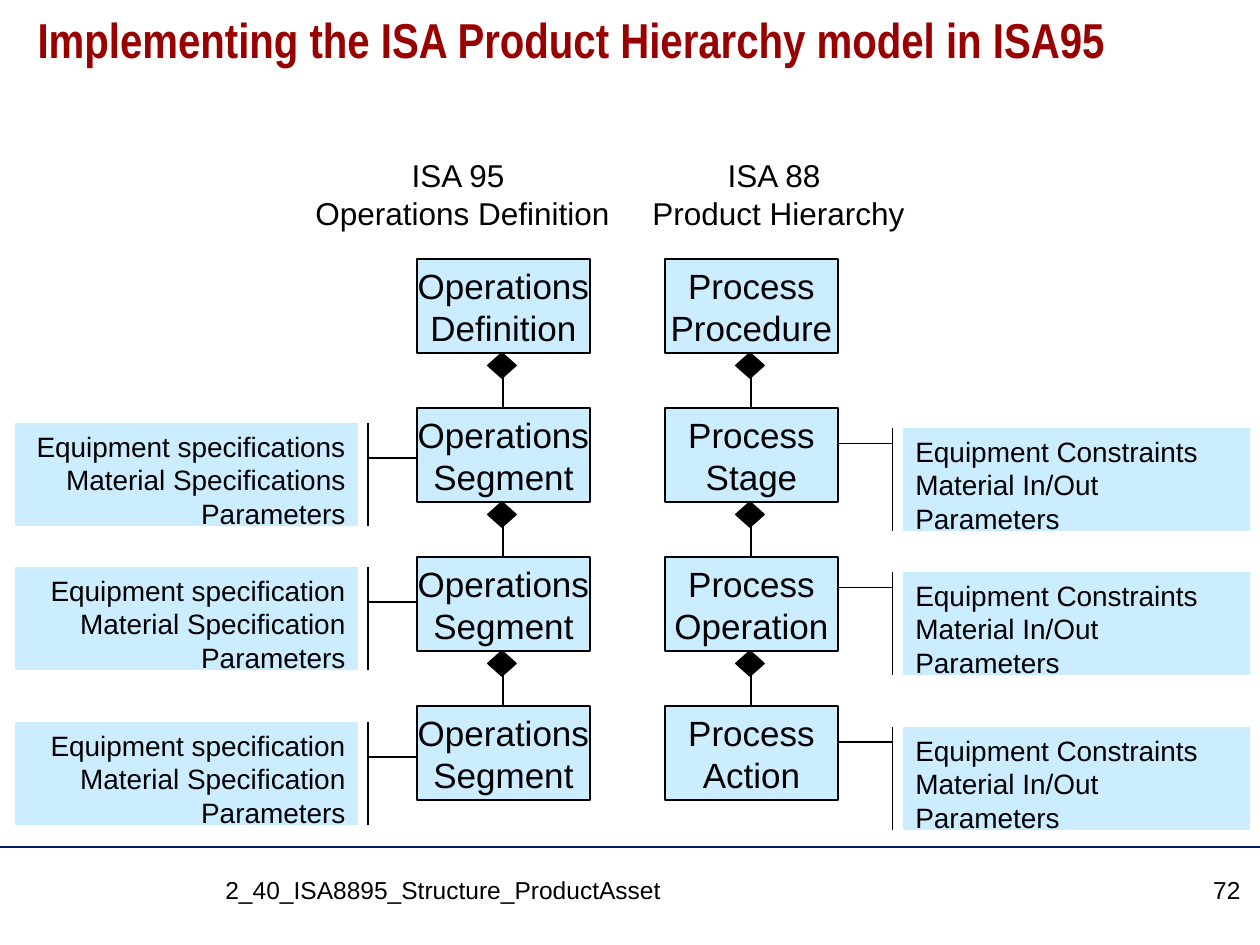
from pptx import Presentation
from pptx.dml.color import RGBColor
from pptx.enum.shapes import MSO_CONNECTOR, MSO_SHAPE
from pptx.enum.text import MSO_ANCHOR, MSO_AUTO_SIZE, PP_ALIGN
from pptx.oxml.ns import qn
from pptx.util import Pt
from lxml.etree import SubElement

EMU_PER_PX = 914400 / 126
COLORS = {"title": "990000", "box": "CCECFF", "ink": "000000", "rule": "002060"}
COLORS = {name: RGBColor.from_string(value) for name, value in COLORS.items()}


def px(*lengths):
    return [round(length * EMU_PER_PX) for length in lengths]


def write(shape, lines, size, align=PP_ALIGN.LEFT, anchor=MSO_ANCHOR.TOP,
          wrap=True, font="Arial", color="ink", bold=False):
    frame = shape.text_frame
    frame.word_wrap = wrap
    frame.vertical_anchor = anchor
    for index, line in enumerate(lines):
        paragraph = frame.add_paragraph() if index else frame.paragraphs[0]
        paragraph.alignment = align
        run = paragraph.add_run()
        run.text = line
        run.font.name = font
        run.font.size = Pt(size)
        run.font.bold = bold
        run.font.color.rgb = COLORS[color]


presentation = Presentation()
presentation.slide_width, presentation.slide_height = px(1260, 945)
slide = presentation.slides.add_slide(presentation.slide_layouts[5])
shapes = slide.shapes

# Title
title = shapes.title
title.left, title.top, title.width, title.height = px(25, 10, 1211, 105)
write(title, ["Implementing the ISA Product Hierarchy model in ISA95"], 28,
      font="Arial Narrow", color="title", bold=True)
title.text_frame.auto_size = MSO_AUTO_SIZE.NONE
title.text_frame.paragraphs[0].line_spacing = 0.9

# Footer
footer = shapes.add_textbox(*px(213, 869, 908, 57))
write(footer, ["2_40_ISA8895_Structure_ProductAsset"], 14)
page_number = shapes.add_textbox(*px(1137, 869, 116, 57))
write(page_number, ["72"], 14, PP_ALIGN.RIGHT)

# Two hierarchies of boxes, each level joined to the next
BOX_TOP, BOX_WIDTH, BOX_HEIGHT, ROW_PITCH = 259, 173, 94, 149
hierarchies = [
    (417, "Operations", ["Definition", "Segment", "Segment", "Segment"]),
    (665, "Process", ["Procedure", "Stage", "Operation", "Action"]),
]
links = [(0, 847, 1260, 847, "rule", 0.75)]
for left, kind, levels in hierarchies:
    for row, level in enumerate(levels):
        top = BOX_TOP + row * ROW_PITCH
        bottom = top + BOX_HEIGHT
        parts = [(MSO_SHAPE.RECTANGLE, (left, top, BOX_WIDTH, BOX_HEIGHT), "box")]
        if row < len(levels) - 1:
            parts.append((MSO_SHAPE.DIAMOND, (left + 71, bottom, 28, 25), "ink"))
            center = left + BOX_WIDTH // 2
            links.append((center, bottom, center, top + ROW_PITCH, "ink", 1))
        for preset, place, fill in parts:
            shape = shapes.add_shape(preset, *px(*place))
            shape.shadow.inherit = False
            shape.fill.solid()
            shape.fill.fore_color.rgb = COLORS[fill]
            shape.line.color.rgb = COLORS["ink"]
            shape.line.width = Pt(1)
            if preset == MSO_SHAPE.RECTANGLE:
                write(shape, [kind, level], 20, PP_ALIGN.CENTER, MSO_ANCHOR.MIDDLE, wrap=False)

for x1, y1, x2, y2, color, width in links:
    link = shapes.add_connector(MSO_CONNECTOR.STRAIGHT, *px(x1, y1, x2, y2))
    link.line.color.rgb = COLORS[color]
    link.line.width = Pt(width)
    SubElement(link._element.spPr, qn("a:effectLst"))

# Callouts beside the lower three levels
specifications = ["Equipment specification", "Material Specification", "Parameters"]
first_specifications = ["Equipment specifications", "Material Specifications", "Parameters"]
constraints = ["Equipment Constraints", "Material In/Out", "Parameters"]
callout_sides = [
    (15, 0, 343, PP_ALIGN.RIGHT, (0.34, 1.03, 0.34, 1.17),
     [first_specifications, specifications, specifications]),
    (903, 5, 347, PP_ALIGN.LEFT, (0.15, -0.03, 0.15, -0.19), [constraints] * 3),
]
for left, drop, width, align, adjustments, texts in callout_sides:
    for top, lines in zip((423, 567, 722), texts):
        callout = shapes.add_shape(MSO_SHAPE.LINE_CALLOUT_1_ACCENT_BAR,
                                   *px(left, top + drop, width, 103))
        for index, value in enumerate(adjustments):
            callout.adjustments[index] = value
        callout.shadow.inherit = False
        callout.fill.solid()
        callout.fill.fore_color.rgb = COLORS["box"]
        callout.line.color.rgb = COLORS["ink"]
        callout.line.width = Pt(1)
        write(callout, lines, 16, align)

# Column headings
headings = [
    ((302, 150, 321, 89), ["ISA 95 ", "Operations Definition"]),
    ((640, 150, 277, 88), ["ISA 88 ", "Product Hierarchy"]),
]
for place, lines in headings:
    heading = shapes.add_textbox(*px(*place))
    write(heading, lines, 18, PP_ALIGN.CENTER, wrap=False)
    heading.text_frame.auto_size = MSO_AUTO_SIZE.SHAPE_TO_FIT_TEXT

presentation.save("out.pptx")
